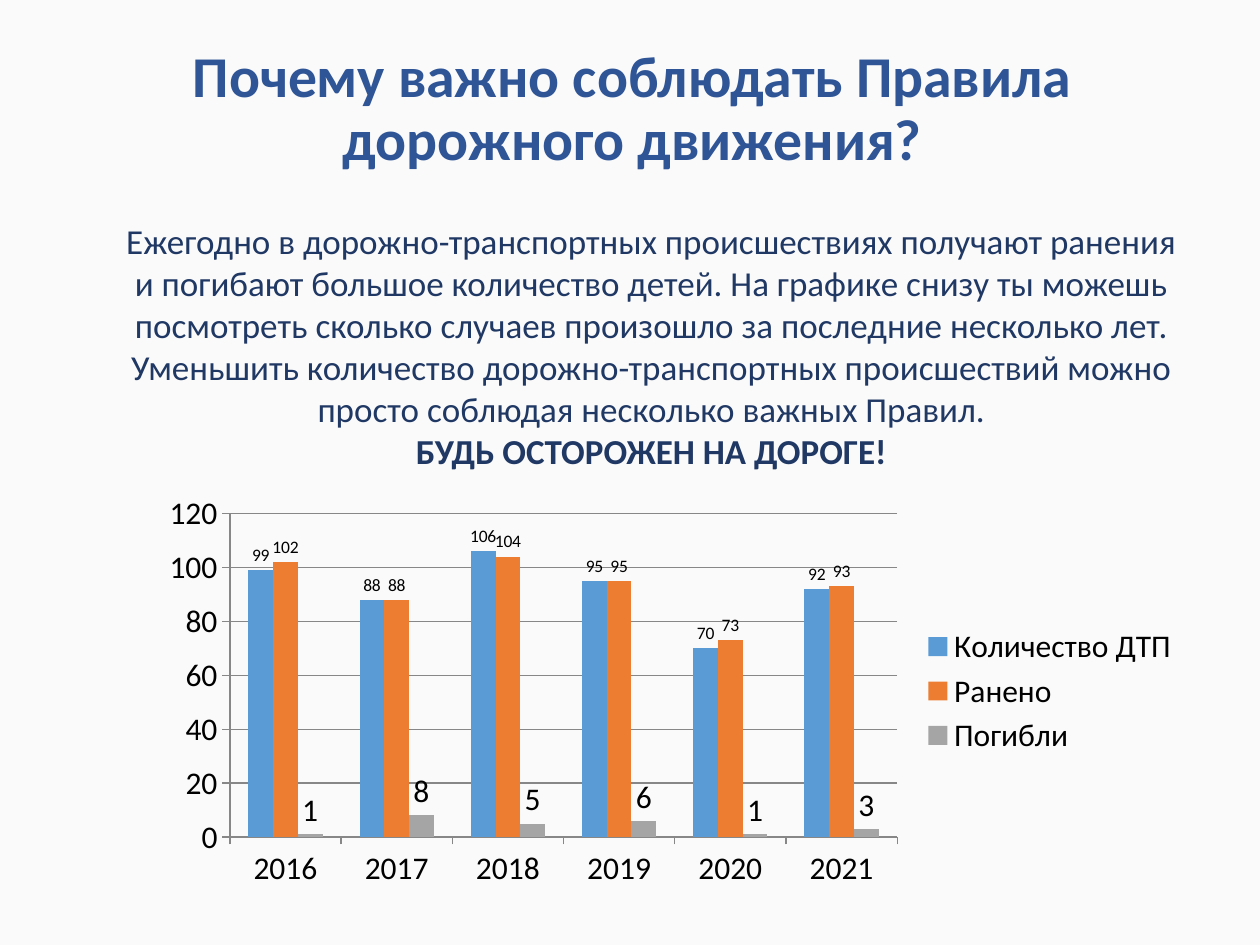
from dataclasses import dataclass

from pptx import Presentation
from pptx.chart.data import CategoryChartData
from pptx.dml.color import RGBColor
from pptx.enum.chart import XL_CHART_TYPE, XL_LABEL_POSITION, XL_LEGEND_POSITION, XL_TICK_MARK
from pptx.enum.text import MSO_ANCHOR, PP_ALIGN
from pptx.util import Inches, Pt


@dataclass(frozen=True)
class Theme:
    """Colours, font and type sizes of the deck."""
    font: str = "Calibri"
    background: str = "FAFAFA"
    title: str = "2F5597"
    body: str = "203864"
    chart_text: str = "000000"
    grid: str = "878787"
    series: tuple = ("5B9BD5", "ED7D31", "A5A5A5")
    title_size: int = 33
    body_size: int = 20
    chart_size: int = 18
    label_size: int = 10


class SlideBuilder:
    """Holds the theme and the current slide and adds elements to it."""

    def __init__(self, prs, theme):
        self.theme = theme
        self.s = prs.slides.add_slide(prs.slide_layouts[5])
        fill = self.s.background.fill
        fill.solid()
        fill.fore_color.rgb = RGBColor.from_string(theme.background)

    def style(self, font, size, color, bold=False):
        font.name = self.theme.font
        font.size = Pt(size)
        font.bold = bold
        font.color.rgb = RGBColor.from_string(color)

    def title(self, text, left, top, width, height):
        sp = self.s.shapes.title
        sp.left, sp.top, sp.width, sp.height = map(Inches, (left, top, width, height))
        tf = sp.text_frame
        tf.text = text
        tf.word_wrap = True
        tf.vertical_anchor = MSO_ANCHOR.MIDDLE
        p = tf.paragraphs[0]
        p.alignment = PP_ALIGN.CENTER
        p.line_spacing = 0.9
        self.style(p.font, self.theme.title_size, self.theme.title, True)

    def text(self, paragraphs, left, top, width, height):
        sp = self.s.shapes.add_textbox(*map(Inches, (left, top, width, height)))
        tf = sp.text_frame
        tf.word_wrap = True
        for i, (text, bold) in enumerate(paragraphs):
            p = tf.add_paragraph() if i else tf.paragraphs[0]
            p.text = text
            p.alignment = PP_ALIGN.CENTER
            self.style(p.font, self.theme.body_size, self.theme.body, bold)

    def column_chart(self, categories, series, left, top, width, height):
        data = CategoryChartData()
        data.categories = categories
        for name, values, _ in series:
            data.add_series(name, values)
        chart = self.s.shapes.add_chart(
            XL_CHART_TYPE.COLUMN_CLUSTERED, *map(Inches, (left, top, width, height)), data
        ).chart
        self.style(chart.font, self.theme.chart_size, self.theme.chart_text)
        chart.has_title = False
        chart.has_legend = True
        chart.legend.position = XL_LEGEND_POSITION.RIGHT
        chart.legend.include_in_layout = False
        grid = RGBColor.from_string(self.theme.grid)
        chart.value_axis.has_major_gridlines = True
        chart.value_axis.major_gridlines.format.line.color.rgb = grid
        for axis in (chart.category_axis, chart.value_axis):
            axis.major_tick_mark = XL_TICK_MARK.OUTSIDE
            axis.format.line.color.rgb = grid
        plot = chart.plots[0]
        plot.gap_width = 150
        plot.overlap = 0
        plot.vary_by_categories = False
        for ser, color, (_, _, label_size) in zip(plot.series, self.theme.series, series):
            ser.format.fill.solid()
            ser.format.fill.fore_color.rgb = RGBColor.from_string(color)
            labels = ser.data_labels
            labels.show_value = True
            labels.position = XL_LABEL_POSITION.OUTSIDE_END
            self.style(labels.font, label_size, self.theme.chart_text)


def main():
    prs = Presentation()
    prs.slide_width, prs.slide_height = Inches(10), Inches(7.5)
    theme = Theme()
    slide = SlideBuilder(prs, theme)
    slide.title("Почему важно соблюдать Правила дорожного движения?", 0.71, 0.15, 8.62, 1.45)
    slide.column_chart(
        ["2016", "2017", "2018", "2019", "2020", "2021"],
        [
            ("Количество ДТП", (99, 88, 106, 95, 70, 92), theme.label_size),
            ("Ранено", (102, 88, 104, 95, 73, 93), theme.label_size),
            ("Погибли", (1, 8, 5, 6, 1, 3), theme.chart_size),
        ],
        1.18, 3.86, 8.28, 3.25,
    )
    slide.text(
        [
            ("Ежегодно в дорожно-транспортных происшествиях получают ранения и погибают "
             "большое количество детей. На графике снизу ты можешь посмотреть сколько "
             "случаев произошло за последние несколько лет. Уменьшить количество "
             "дорожно-транспортных происшествий можно просто соблюдая несколько важных "
             "Правил.", False),
            ("БУДЬ ОСТОРОЖЕН НА ДОРОГЕ!", True),
        ],
        0.81, 1.69, 8.72, 2.12,
    )
    prs.save("out.pptx")


if __name__ == "__main__":
    main()
